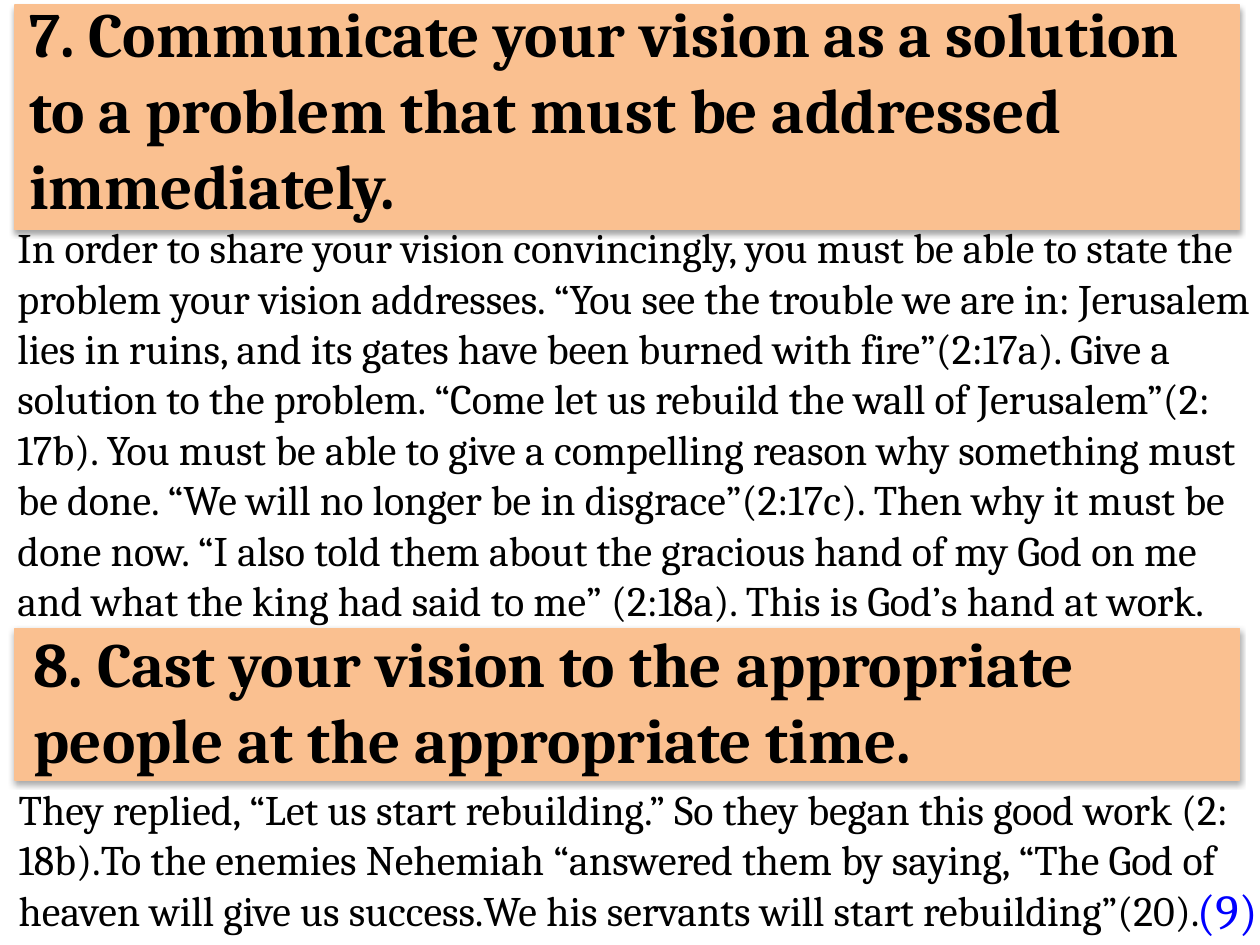
from dataclasses import dataclass

from lxml.etree import SubElement
from pptx import Presentation
from pptx.dml.color import RGBColor
from pptx.enum.shapes import MSO_SHAPE
from pptx.enum.text import MSO_ANCHOR, MSO_AUTO_SIZE, PP_ALIGN
from pptx.oxml.ns import qn
from pptx.util import Pt

PEACH = RGBColor(0xFA, 0xC0, 0x90)
BLACK = RGBColor(0x00, 0x00, 0x00)
BLUE = RGBColor(0x00, 0x00, 0xFF)
FONT = "Cambria"


@dataclass(frozen=True)
class Frame:
    left: float
    top: float
    width: float
    height: float

    def lengths(self) -> tuple:
        return Pt(self.left), Pt(self.top), Pt(self.width), Pt(self.height)


@dataclass(frozen=True)
class Passage:
    frame: Frame
    text: str
    size: float = 24
    color: RGBColor = BLACK
    bold: bool = False


PAGE_NUMBER = Passage(Frame(676.8, 499.7, 86.4, 41), "(9)", 28, BLUE)
PROBLEM = Passage(
    Frame(2.9, 123.1, 723.6, 239.8),
    "In order to share your vision convincingly, you must be able to state the "
    "problem your vision addresses. “You see the trouble we are in: Jerusalem "
    "lies in ruins, and its gates have been burned with fire”(2:17a). Give a "
    "solution to the problem. “Come let us rebuild the wall of Jerusalem”(2: "
    "17b). You must be able to give a compelling reason why something must "
    "be done. “We will no longer be in disgrace”(2:17c). Then why it must be "
    "done now. “I also told them about the gracious hand of my God on me "
    "and what the king had said to me” (2:18a). This is God’s hand at work.",
)
REPLY = Passage(
    Frame(3.6, 444.2, 716.4, 94.3),
    "They replied, “Let us start rebuilding.” So they began this good work (2: "
    "18b).To the enemies Nehemiah “answered them by saying, “The God of "
    "heaven will give us success.We his servants will start rebuilding”(20).",
)
HEADING_SEVEN = Passage(
    Frame(9.4, -6.5, 699.1, 137.5),
    "7. Communicate your vision as a solution to a problem that must be "
    "addressed immediately.",
    36, bold=True,
)
HEADING_EIGHT = Passage(
    Frame(12.2, 353.5, 715, 94.3),
    "8. Cast your vision to the appropriate people at the appropriate time.",
    36, bold=True,
)


def write(box, passage: Passage) -> None:
    """Place a text shape and format its single paragraph."""
    box.left, box.top, box.width, box.height = passage.frame.lengths()
    frame = box.text_frame
    frame.text = passage.text
    frame.word_wrap = True
    frame.auto_size = MSO_AUTO_SIZE.NONE
    frame.vertical_anchor = MSO_ANCHOR.TOP
    para = frame.paragraphs[0]
    para.alignment = PP_ALIGN.LEFT
    font = para.runs[0].font
    font.name, font.size, font.bold = FONT, Pt(passage.size), passage.bold
    font.color.rgb = passage.color


def add_passage(page, passage: Passage) -> None:
    write(page.shapes.add_textbox(*passage.frame.lengths()), passage)


def add_banner(page, top: float, height: float) -> None:
    """Draw a peach band with a soft shadow below it."""
    frame = Frame(8.6, top, 699.8, height)
    banner = page.shapes.add_shape(MSO_SHAPE.RECTANGLE, *frame.lengths())
    banner.fill.solid()
    banner.fill.fore_color.rgb = PEACH
    banner.line.color.rgb = PEACH
    banner.line.width = Pt(0.75)
    banner.shadow.inherit = False
    effects = banner._element.spPr.find(qn("a:effectLst"))
    shadow = SubElement(
        effects, qn("a:outerShdw"), blurRad=str(Pt(3.1)), dist=str(Pt(1.8)),
        dir="5400000", rotWithShape="0",
    )
    color = SubElement(shadow, qn("a:srgbClr"), val=str(BLACK))
    SubElement(color, qn("a:alpha"), val="35000")


def main() -> None:
    deck = Presentation()
    deck.slide_width, deck.slide_height = Pt(720), Pt(540)
    page = deck.slides.add_slide(deck.slide_layouts[5])

    # Page number and first passage
    add_passage(page, PAGE_NUMBER)
    add_passage(page, PROBLEM)

    # Title, brought in front of its banner
    add_banner(page, top=2.9, height=128.2)
    title = page.shapes.title
    write(title, HEADING_SEVEN)
    page.shapes._spTree.append(title._element)

    # Second passage and its heading
    add_passage(page, REPLY)
    add_banner(page, top=359.3, height=86.4)
    add_passage(page, HEADING_EIGHT)

    deck.save("out.pptx")


if __name__ == "__main__":
    main()
